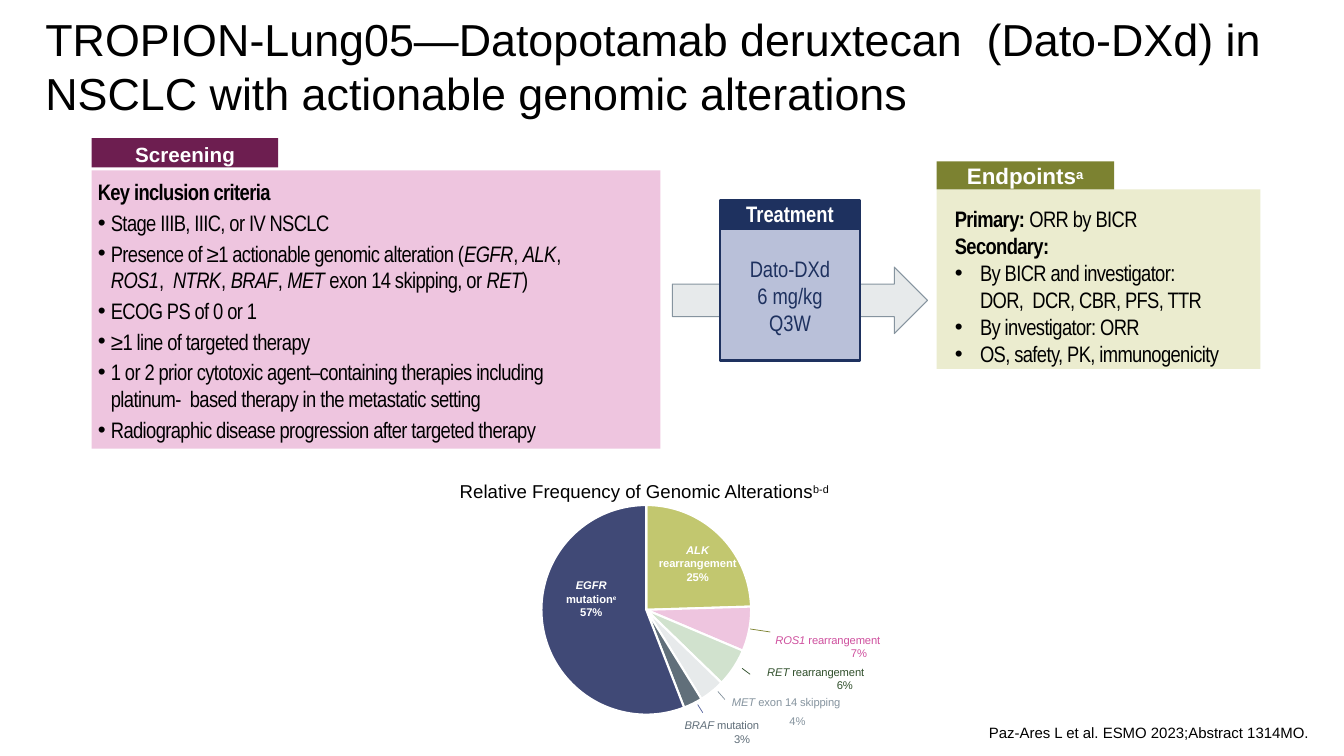
from dataclasses import dataclass

from lxml import etree
from pptx import Presentation
from pptx.chart.data import CategoryChartData
from pptx.dml.color import RGBColor
from pptx.enum.chart import XL_CHART_TYPE as ChartType
from pptx.enum.shapes import MSO_CONNECTOR as Connector, MSO_SHAPE as Preset
from pptx.enum.text import MSO_ANCHOR as Anchor, MSO_AUTO_SIZE as AutoSize, PP_ALIGN as Align
from pptx.oxml.ns import qn
from pptx.util import Inches, Pt

SANS, NARROW = "Arial", "Arial Narrow"
BLACK, WHITE, NAVY, GREY = "000000", "FFFFFF", "1E315F", "86949F"


@dataclass
class Box:
    left: float
    top: float
    width: float
    height: float


@dataclass
class Style:
    font: str
    size: float
    color: str
    bold: bool = False
    align: Align = Align.LEFT
    spacing: int = 0  # hundredths of a point


@dataclass
class Line:
    """Markup: * bold, _ italic, ^ superscript, newline for a line break."""
    text: str
    margin: float = 0
    indent: float = 0
    bullet: bool = False
    before: float = 0


@dataclass
class Slice:
    name: str
    percent: int
    color: str


@dataclass
class Label:
    text: str
    box: Box
    color: str
    percent_offset: float = 0


CRITERIA = [Line("*Key inclusion criteria*", 0.06)] + [
    Line(text, 0.19, -0.13, True, 2.7) for text in (
        "Stage IIIB, IIIC, or IV NSCLC",
        "Presence of ≥1 actionable genomic alteration (_EGFR_, _ALK_,\n"
        "_ROS1_,  _NTRK_, _BRAF_, _MET_ exon 14 skipping, or _RET_)",
        "ECOG PS of 0 or 1",
        "≥1 line of targeted therapy",
        "1 or 2 prior cytotoxic agent–containing therapies including\n"
        "platinum-  based therapy in the metastatic setting",
        "Radiographic disease progression after targeted therapy",
    )]
ENDPOINTS = [Line("*Primary:* ORR by BICR", 0.18), Line("*Secondary:*", 0.18)] + [
    Line(text, 0.43, -0.25, True) for text in (
        "By BICR and investigator:\nDOR,  DCR, CBR, PFS, TTR",
        "By investigator: ORR",
        "OS, safety, PK, immunogenicity",
    )]
SLICES = [
    Slice("ALK rearrangement", 25, "C2C76F"), Slice("ROS1 rearrangement", 7, "EEC5DF"),
    Slice("RET rearrangement", 6, "D1E2CE"), Slice("MET exon 14 skipping", 4, "E7EAEB"),
    Slice("BRAF mutation", 3, "616F7A"), Slice("EGFR mutation", 57, "404976"),
]
INNER_LABELS = [
    Label("_EGFR_\nmutation^e^\n57%", Box(5.51, 5.72, 0.71, 0.42), WHITE),
    Label("_ALK_\nrearrangement\n25%", Box(6.43, 5.37, 0.98, 0.42), WHITE),
]
OUTER_LABELS = [
    Label("_ROS1_ rearrangement\n7%", Box(7.69, 6.26, 1.2, 0.29), "CF519F", 0.75),
    Label("_RET_ rearrangement\n6%", Box(7.61, 6.58, 1.2, 0.29), "31502C", 0.69),
    Label("_MET_ exon 14 skipping", Box(7.26, 6.88, 1.2, 0.15), GREY),
    Label("4%", Box(7.83, 7.07, 0.22, 0.15), GREY),
    Label("_BRAF_ mutation\n3%", Box(6.79, 7.11, 0.95, 0.29), "616F7A", 0.49),
]
LEADERS = [
    (7.44, 6.24, 7.64, 6.27, "7B812E"), (7.36, 6.63, 7.44, 6.69, "31502C"),
    (7.12, 6.86, 7.19, 6.94, GREY), (6.92, 6.99, 6.97, 7.07, "55629D"),
]


def rgb(color: str) -> RGBColor:
    return RGBColor.from_string(color)


def place(shape, box: Box) -> None:
    shape.left, shape.top = Inches(box.left), Inches(box.top)
    shape.width, shape.height = Inches(box.width), Inches(box.height)


def paint(shape, fill: str, line: str = "", width: float = 0) -> None:
    shape.fill.solid()
    shape.fill.fore_color.rgb = rgb(fill)
    if line:
        shape.line.color.rgb = rgb(line)
        shape.line.width = Pt(width)
    else:
        shape.line.fill.background()


def add_markup(paragraph, text: str) -> None:
    marks = {"*": False, "_": False, "^": False}
    piece = ""
    for character in text + "\n":
        if character not in marks and character != "\n":
            piece += character
            continue
        if piece:
            run = paragraph.add_run()
            run.text = piece
            if marks["*"]:
                run.font.bold = True
            if marks["_"]:
                run.font.italic = True
            if marks["^"]:
                run.font._element.set("baseline", "25000")
            piece = ""
        if character in marks:
            marks[character] = not marks[character]
        else:
            paragraph.add_line_break()
    paragraph._p.remove(paragraph._p.findall(qn("a:br"))[-1])


def write(shape, lines: list[Line], style: Style, insets=(0, 0.02, 0, 0), anchor=Anchor.TOP) -> None:
    frame = shape.text_frame
    frame.word_wrap, frame.auto_size, frame.vertical_anchor = True, AutoSize.NONE, anchor
    (frame.margin_left, frame.margin_top,
     frame.margin_right, frame.margin_bottom) = map(Inches, insets)
    for index, line in enumerate(lines):
        paragraph = frame.add_paragraph() if index else frame.paragraphs[0]
        paragraph.alignment = style.align
        paragraph.space_before = Pt(line.before)
        properties = paragraph._p.get_or_add_pPr()
        properties.set("marL", str(Inches(line.margin)))
        properties.set("indent", str(Inches(line.indent)))
        if line.bullet:
            etree.SubElement(properties, qn("a:buChar")).set("char", "•")
        else:
            etree.SubElement(properties, qn("a:buNone"))
        font = paragraph.font
        font.name, font.size, font.bold = style.font, Pt(style.size), style.bold
        font.color.rgb = rgb(style.color)
        properties.find(qn("a:defRPr")).set("spc", str(style.spacing))
        add_markup(paragraph, line.text)


def add_block(slide, preset: Preset, box: Box, fill: str, line: str = "", width: float = 0):
    shape = slide.shapes.add_shape(preset, 0, 0, 0, 0)
    place(shape, box)
    shape.shadow.inherit = False
    paint(shape, fill, line, width)
    return shape


def add_text(slide, line: Line, box: Box, style: Style, insets=(0, 0.02, 0, 0)) -> None:
    shape = slide.shapes.add_textbox(0, 0, 0, 0)
    place(shape, box)
    write(shape, [line], style, insets)


def add_pie(slide, box: Box) -> None:
    data = CategoryChartData()
    data.categories = [part.name for part in SLICES]
    data.add_series("Relative frequency (%)", [part.percent for part in SLICES])
    chart = slide.shapes.add_chart(ChartType.PIE, Inches(box.left), Inches(box.top),
                                   Inches(box.width), Inches(box.height), data).chart
    chart.has_legend = chart.has_title = False
    chart.font.name, chart.font.size = SANS, Pt(8)
    chart.plots[0].vary_by_categories = True
    for index, part in enumerate(SLICES):
        paint(chart.plots[0].series[0].points[index].format, part.color, WHITE, 1.5)
    # Let the pie fill its frame
    area = chart._chartSpace.find(".//" + qn("c:plotArea"))
    for old in area.findall(qn("c:layout")):
        area.remove(old)
    layout = etree.Element(qn("c:layout"))
    area.insert(0, layout)
    manual = etree.SubElement(layout, qn("c:manualLayout"))
    for tag, value in (("layoutTarget", "inner"), ("xMode", "edge"), ("yMode", "edge"),
                       ("x", "0"), ("y", "0"), ("w", "1"), ("h", "1")):
        etree.SubElement(manual, qn("c:" + tag)).set("val", value)


def add_leader(slide, x1: float, y1: float, x2: float, y2: float, color: str) -> None:
    leader = slide.shapes.add_connector(Connector.STRAIGHT, *map(Inches, (x1, y1, x2, y2)))
    leader.line.color.rgb, leader.line.width = rgb(color), Pt(0.5)
    etree.SubElement(leader._element.spPr, qn("a:effectLst"))


def main() -> None:
    presentation = Presentation()
    presentation.slide_width, presentation.slide_height = Inches(13.33), Inches(7.5)
    slide = presentation.slides.add_slide(presentation.slide_layouts[3])
    title, criteria, endpoints = slide.placeholders

    # Title and the two lists
    place(title, Box(0.35, 0.07, 12.68, 1.18))
    write(title, [Line("TROPION-Lung05—Datopotamab deruxtecan  (Dato-DXd) in "
                       "NSCLC with actionable genomic alterations")],
          Style(SANS, 32, BLACK), (0.1, 0.05, 0.1, 0.05))
    list_style = Style(NARROW, 16, BLACK, spacing=-42)
    for body, box, fill, lines, top in (
            (criteria, Box(0.91, 1.69, 5.64, 2.76), "EEC5DF", CRITERIA, 0.08),
            (endpoints, Box(9.29, 1.88, 3.21, 1.78), "EBECCF", ENDPOINTS, 0.16)):
        place(body, box)
        paint(body, fill)
        write(body, lines, list_style, (0, top, 0, 0))

    # List headings
    for text, box, fill, size, left, top in (
            ("Screening", Box(0.91, 1.37, 1.85, 0.29), "6D1E50", 14.7, 0.43, 0.04),
            ("Endpoints^a^", Box(9.29, 1.6, 1.76, 0.28), "7C8231", 16, 0.3, 0.01)):
        write(add_block(slide, Preset.RECTANGLE, box, fill), [Line(text, left)],
              Style(SANS, size, WHITE, True), (0, top, 0, 0))

    # Treatment
    arrow = add_block(slide, Preset.RIGHT_ARROW, Box(6.67, 2.65, 2.53, 0.66), "E7EAEB", GREY, 0.75)
    arrow.adjustments[0], arrow.adjustments[1] = 0.49, 0.5
    dose = add_block(slide, Preset.RECTANGLE, Box(7.14, 2.27, 1.39, 1.31), "B9C0D9", NAVY, 2)
    write(dose, [Line("Dato-DXd\n6 mg/kg\nQ3W")],
          Style(NARROW, 16, NAVY, align=Align.CENTER), anchor=Anchor.MIDDLE)
    header = add_block(slide, Preset.RECTANGLE, Box(7.14, 1.99, 1.39, 0.27), NAVY, NAVY, 2)
    write(header, [Line("Treatment")], Style(NARROW, 16, WHITE, True, Align.CENTER), (0, 0, 0, 0))

    # Pie chart with its labels
    add_pie(slide, Box(5.36, 5, 2.1, 2.1))
    add_text(slide, Line("Relative Frequency of Genomic Alterations^b-d^", 0.06),
             Box(4.5, 4.74, 3.9, 0.24), Style(SANS, 13.3, BLACK))
    for label in INNER_LABELS:
        add_text(slide, Line(label.text), label.box,
                 Style(SANS, 8, label.color, True, Align.CENTER, -5))
    for label in OUTER_LABELS:
        add_text(slide, Line(label.text, label.percent_offset, -label.percent_offset),
                 label.box, Style(SANS, 8, label.color, spacing=-10))
    for leader in LEADERS:
        add_leader(slide, *leader)

    # Citation
    add_text(slide, Line("Paz-Ares L et al. ESMO 2023;Abstract 1314MO."),
             Box(9.71, 7.13, 3.64, 0.29), Style(SANS, 10.7, BLACK), (0.1, 0.05, 0.1, 0.05))
    presentation.save("out.pptx")


if __name__ == "__main__":
    main()
